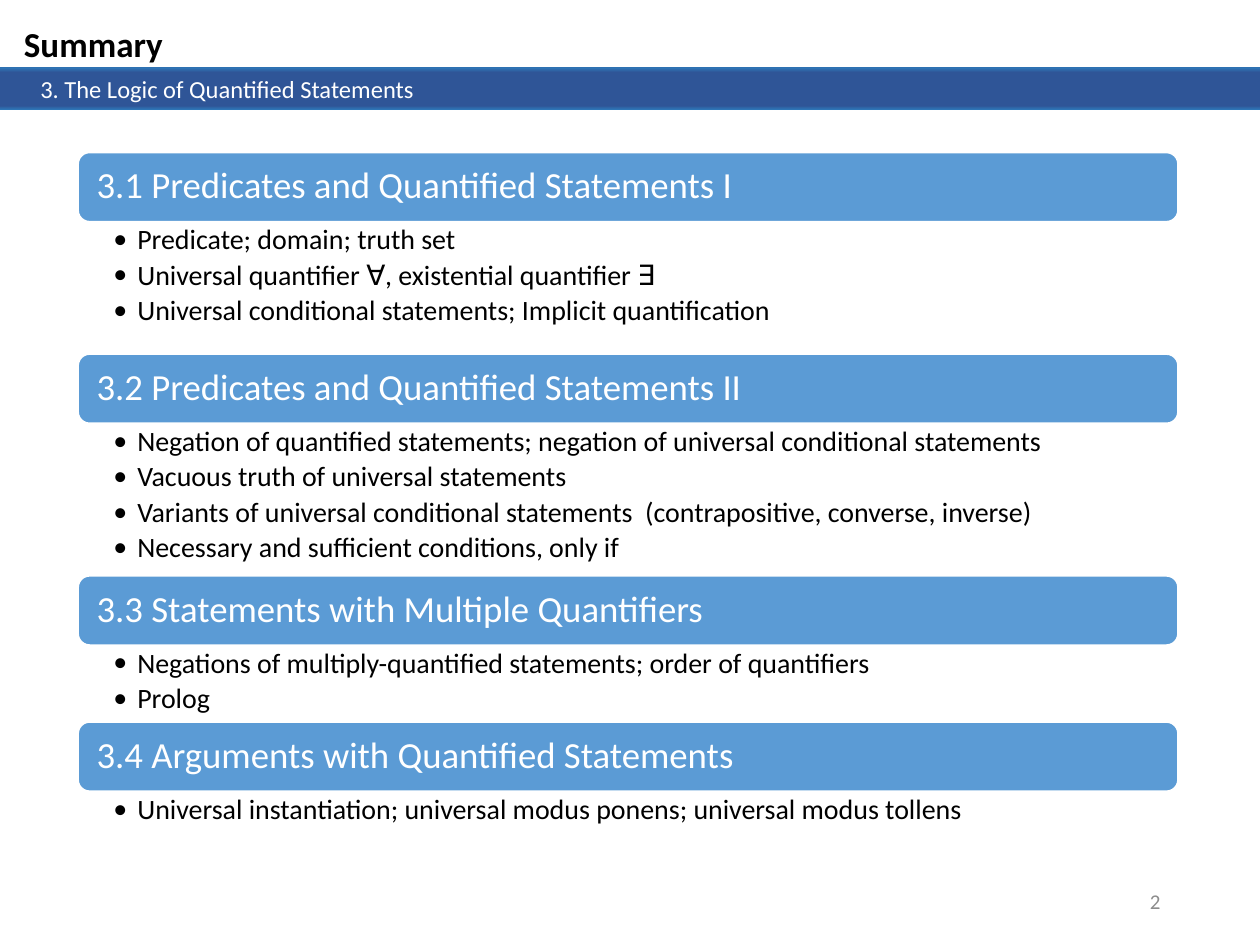
from dataclasses import dataclass

from lxml import etree
from pptx import Presentation
from pptx import util as u
from pptx.dml.color import RGBColor
from pptx.enum import shapes, text
from pptx.oxml import ns

FONT = "Calibri"
BLACK = RGBColor(0x00, 0x00, 0x00)
WHITE = RGBColor(0xFF, 0xFF, 0xFF)
GREY = RGBColor(0x8C, 0x8C, 0x8C)
HEADING_BLUE = RGBColor(0x5B, 0x9B, 0xD5)
BAND_EDGE = RGBColor(0x2E, 0x75, 0xB6)
BAND_CORE = RGBColor(0x2F, 0x55, 0x97)
BAND_STOPS = ((0, BAND_EDGE), (11, BAND_CORE), (91, BAND_CORE), (100, BAND_EDGE))

SECTION_LEFT, SECTION_WIDTH = 0.62, 8.73
SECTIONS_TOP = 1.21
HEADING_HEIGHT = 0.55
BULLET_INDENT = 0.19


@dataclass(frozen=True)
class Section:
    heading: str
    topics: tuple[str, ...]
    list_height: float


SECTIONS = (
    Section("3.1 Predicates and Quantified Statements I", (
        "Predicate; domain; truth set",
        "Universal quantifier ∀, existential quantifier ∃",
        "Universal conditional statements; Implicit quantification",
    ), 1.05),
    Section("3.2 Predicates and Quantified Statements II", (
        "Negation of quantified statements; negation of universal conditional statements",
        "Vacuous truth of universal statements",
        "Variants of universal conditional statements  (contrapositive, converse, inverse)",
        "Necessary and sufficient conditions, only if",
    ), 1.21),
    Section("3.3 Statements with Multiple Quantifiers", (
        "Negations of multiply-quantified statements; order of quantifiers",
        "Prolog",
    ), 0.61),
    Section("3.4 Arguments with Quantified Statements", (
        "Universal instantiation; universal modus ponens; universal modus tollens",
    ), 0.38),
)


def place(shape, left: float, top: float, width: float, height: float) -> None:
    shape.left, shape.top = u.Inches(left), u.Inches(top)
    shape.width, shape.height = u.Inches(width), u.Inches(height)


def write(shape, content: str, size: float, color: RGBColor, *, bold: bool = False,
          align=text.PP_ALIGN.LEFT, anchor=text.MSO_ANCHOR.TOP,
          margins: tuple[float, float, float, float] = (0.1, 0.05, 0.1, 0.05)) -> None:
    """Fill a shape with text; margins run left, top, right, bottom."""
    frame = shape.text_frame
    frame.text = content
    frame.word_wrap = True
    frame.auto_size = text.MSO_AUTO_SIZE.NONE
    frame.vertical_anchor = anchor
    (frame.margin_left, frame.margin_top,
     frame.margin_right, frame.margin_bottom) = map(u.Inches, margins)
    for paragraph in frame.paragraphs:
        paragraph.alignment = align
        paragraph.space_before = u.Pt(0)
        for run in paragraph.runs:
            run.font.name, run.font.size, run.font.bold = FONT, u.Pt(size), bold
            run.font.color.rgb = color


def add_band(slide, top: float, height: float):
    band = slide.shapes.add_shape(
        shapes.MSO_SHAPE.RECTANGLE, 0, u.Inches(top), u.Inches(10), u.Inches(height))
    band.shadow.inherit = False
    band.line.fill.background()
    band.fill.gradient()
    band.fill.gradient_angle = 270
    stops = next(band.element.iter(ns.qn("a:gsLst")))
    for stop in list(stops):
        stops.remove(stop)
    for percent, color in BAND_STOPS:
        stop = etree.SubElement(stops, ns.qn("a:gs"), pos=str(percent * 1000))
        etree.SubElement(stop, ns.qn("a:srgbClr"), val=str(color))
    return band


def add_heading(slide, heading: str, top: float) -> None:
    bar = slide.shapes.add_shape(
        shapes.MSO_SHAPE.ROUNDED_RECTANGLE, u.Inches(SECTION_LEFT), u.Inches(top),
        u.Inches(SECTION_WIDTH), u.Inches(HEADING_HEIGHT))
    bar.shadow.inherit = False
    bar.fill.solid()
    bar.fill.fore_color.rgb = HEADING_BLUE
    bar.line.color.rgb = WHITE
    bar.line.width = u.Pt(1)
    write(bar, heading, 21, WHITE, anchor=text.MSO_ANCHOR.MIDDLE,
          margins=(0.12, 0.09, 0.12, 0.09))
    bar.text_frame.paragraphs[0].line_spacing = 0.9


def fill_topics(body, section: Section, top: float) -> None:
    place(body, SECTION_LEFT, top, SECTION_WIDTH, section.list_height)
    write(body, "\n".join(section.topics), 16, BLACK, margins=(0.28, 0.03, 0.16, 0.03))
    for paragraph in body.text_frame.paragraphs:
        paragraph.line_spacing = 0.9
        paragraph.space_after = u.Pt(3)
        properties = paragraph._p.get_or_add_pPr()
        properties.set("marL", str(u.Inches(BULLET_INDENT)))
        properties.set("indent", str(-u.Inches(BULLET_INDENT)))
        etree.SubElement(properties, ns.qn("a:buFont"), typeface=FONT)
        etree.SubElement(properties, ns.qn("a:buChar"), char="•")


def main() -> None:
    prs = Presentation()
    prs.slide_width, prs.slide_height = u.Inches(10), u.Inches(7.5)
    # The comparison layout offers a title and four body placeholders
    slide = prs.slides.add_slide(prs.slide_layouts.get_by_name("Comparison"))
    title, *bodies = slide.placeholders

    # Title and chapter band
    place(title, 0.09, 0.13, 2.69, 0.44)
    write(title, "Summary", 20, BLACK, bold=True)
    add_band(slide, 0.53, 0.3)
    chapter = add_band(slide, 0.54, 0.33)
    write(chapter, "3. The Logic of Quantified Statements", 14, WHITE,
          margins=(0.32, 0.05, 0.1, 0.05))

    # Sections, stacked from top to bottom
    top = SECTIONS_TOP
    for section, body in zip(SECTIONS, bodies):
        add_heading(slide, section.heading, top)
        fill_topics(body, section, top + HEADING_HEIGHT)
        top += HEADING_HEIGHT + section.list_height

    # Page number
    page_number = slide.shapes.add_textbox(
        u.Inches(7.06), u.Inches(6.95), u.Inches(2.25), u.Inches(0.4))
    write(page_number, "2", 12, GREY, align=text.PP_ALIGN.RIGHT,
          anchor=text.MSO_ANCHOR.MIDDLE)

    prs.save("out.pptx")


if __name__ == "__main__":
    main()
